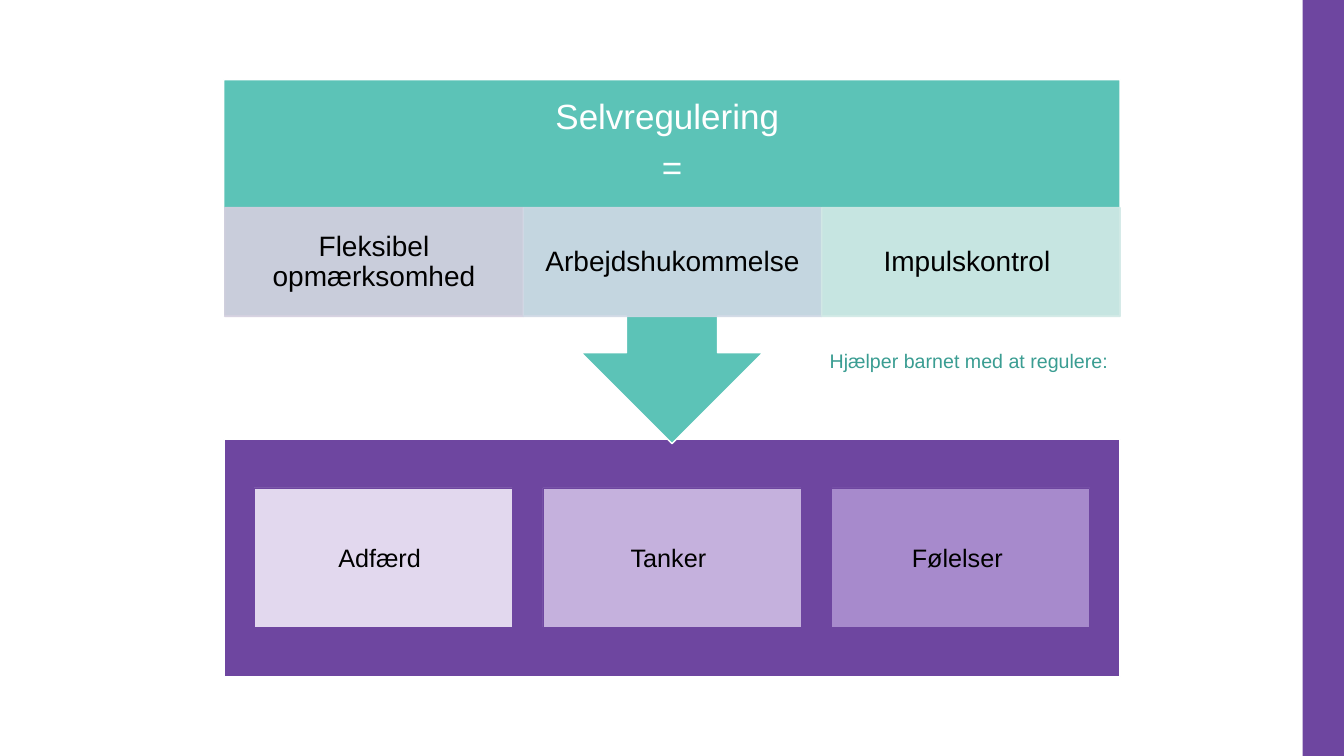
from lxml import etree
from pptx import Presentation
from pptx.dml.color import RGBColor
from pptx.enum.shapes import MSO_SHAPE as Shape
from pptx.enum.text import MSO_ANCHOR as Anchor, PP_ALIGN as Align
from pptx.oxml.ns import qn
from pptx.util import Inches, Pt

# Content
PURPLE, TEAL, WHITE, BLACK = "6E46A0", "5CC3B7", "FFFFFF", "000000"
heading = ["Selvregulering ", "="]
skills = [("Fleksibel opmærksomhed", "D5CFDF"),
          ("Arbejdshukommelse", "D0D9E5"),
          ("Impulskontrol ", "D2E9E6")]
note = "Hjælper barnet med at regulere:"
areas = [("Adfærd ", "E2D8EE"), ("Tanker ", "C5B1DD"), ("Følelser ", "A78ACC")]

# Shared geometry
LEFT, WIDTH, TOP = 2.22, 8.89, 0.79
SKILL_W, AREA_W, AREA_STEP = 2.96, 2.56, 2.865


def rgb(code):
    return RGBColor.from_string(code)


def fade(shape, percent):
    for color in shape._element.spPr.iter(qn("a:srgbClr")):
        etree.SubElement(color, qn("a:alpha")).set("val", str(percent * 1000))


def draw(kind, box, fill, line=None, width=1):
    shape = slide.shapes.add_shape(kind, *map(Inches, box))
    shape.shadow.inherit = False
    shape.fill.solid()
    shape.fill.fore_color.rgb = rgb(fill)
    if line:
        shape.line.color.rgb = rgb(line)
        shape.line.width = Pt(width)
    else:
        shape.line.fill.background()
    return shape


def write(shape, lines, size, color, align=Align.CENTER, anchor=Anchor.MIDDLE,
          inset=(0.1, 0.05), spacing=None, gap=0):
    frame = shape.text_frame
    frame.word_wrap = True
    frame.vertical_anchor = anchor
    frame.margin_left = frame.margin_right = Inches(inset[0])
    frame.margin_top = frame.margin_bottom = Inches(inset[1])
    frame.text = "\n".join(lines)
    for para in frame.paragraphs:
        para.alignment = align
        para.line_spacing = spacing
        para.space_after = Pt(gap)
        para.font.name = "Arial"
        para.font.size = Pt(size)
        para.font.color.rgb = rgb(color)


def text_box(box):
    return slide.shapes.add_textbox(*map(Inches, box))


deck = Presentation()
deck.slide_width, deck.slide_height = Inches(13.33), Inches(7.5)
slide = deck.slides.add_slide(deck.slide_layouts[6])

# Side bar, lower panel and arrow callout
draw(Shape.RECTANGLE, (12.92, 0, 0.42, 7.5), PURPLE)
draw(Shape.RECTANGLE, (LEFT, 4.36, WIDTH, 2.35), PURPLE, WHITE)
arrow = draw(Shape.UP_ARROW_CALLOUT, (LEFT, TOP, WIDTH, 3.61), TEAL, WHITE)
arrow.rotation = 180
write(text_box((LEFT, TOP, WIDTH, 1.27)), heading, 25, WHITE,
      inset=(0.19, 0.19), spacing=0.9, gap=10)

# Skills that make up the heading
for i, (name, fill) in enumerate(skills):
    box = (LEFT + 0.01 + i * SKILL_W, 2.06, SKILL_W, 1.08)
    cell = draw(Shape.RECTANGLE, box, fill, fill)
    fade(cell, 90)
    write(cell, [name], 20, BLACK, inset=(0.16, 0.03), spacing=0.9)

# Areas being regulated
for i, (name, fill) in enumerate(areas):
    box = (2.52 + i * AREA_STEP, 4.84, AREA_W, 1.38)
    cell = draw(Shape.RECTANGLE, box, fill, PURPLE, 0.5)
    write(cell, [name], 18, BLACK)

# Note beside the arrow
write(text_box((8.13, 3.41, 2.98, 0.34)), [note], 14, "3A9D92",
      align=Align.LEFT, anchor=Anchor.TOP)

deck.save("out.pptx")
